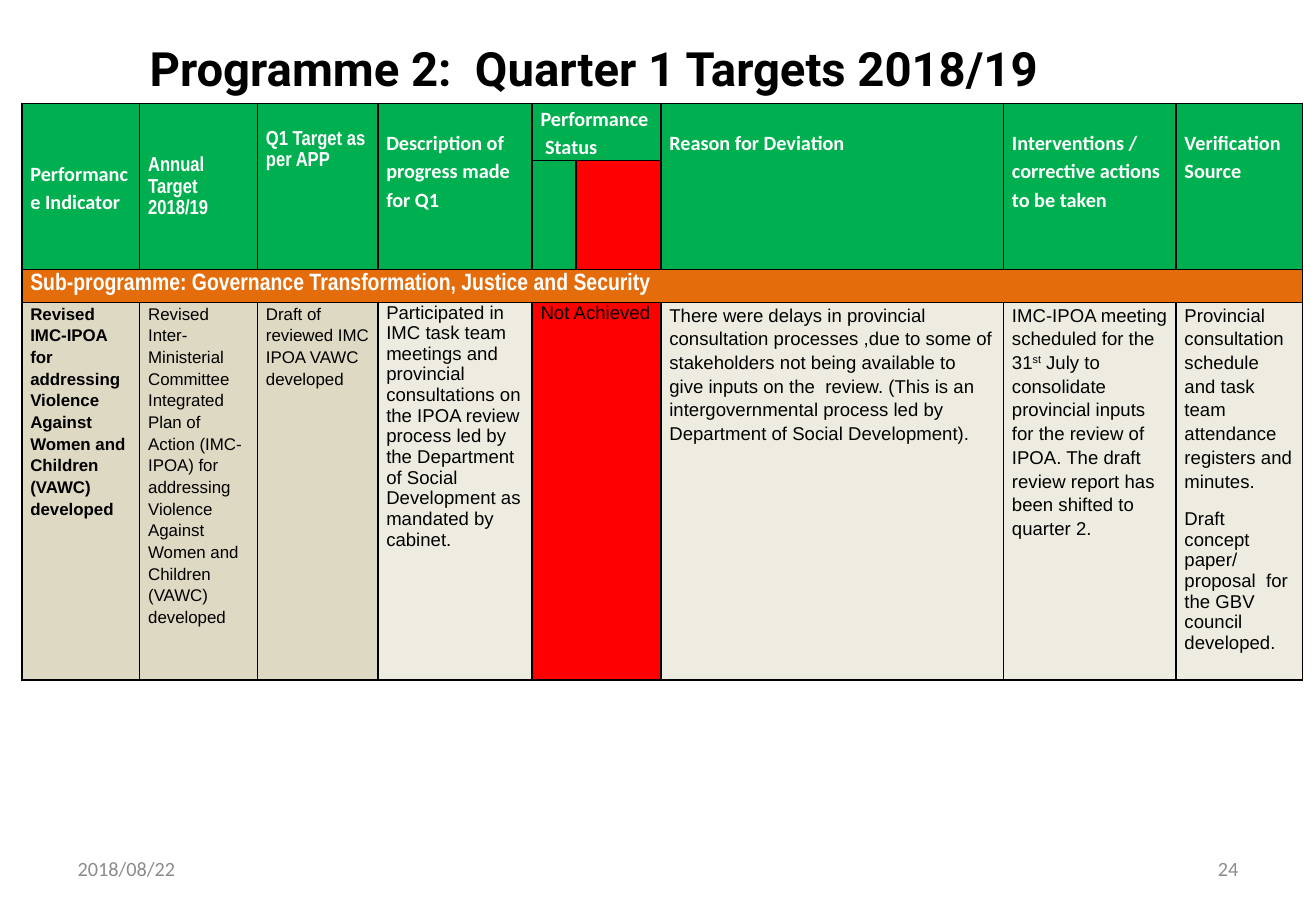
"""Build the Programme 2 quarterly targets slide."""
import pptx
import pptx.util
import pptx.dml.color
import pptx.enum.text
from lxml import etree

Inches, Pt = pptx.util.Inches, pptx.util.Pt
RGB = pptx.dml.color.RGBColor.from_string
ALIGN, ANCHOR = pptx.enum.text.PP_ALIGN, pptx.enum.text.MSO_ANCHOR

THEME = {
    "green": "00B050", "red": "FF0000", "orange": "E46C0A", "tan": "DDD9C3",
    "cream": "EEECE1", "border": "000000",
    "title": {"name": "Roboto", "size": Pt(28), "bold": True, "color": "000000"},
    "footer": {"name": "Calibri", "size": Pt(12), "bold": False, "color": "8C8C8C"},
    "head": {"name": "Calibri", "size": Pt(12), "bold": True, "color": "FFFFFF"},
    "narrow": {"name": "Arial Narrow", "size": Pt(12), "bold": True, "color": "FFFFFF"},
    "band": {"name": "Arial Narrow", "size": Pt(14), "bold": True, "color": "FFFFFF"},
    "key": {"name": "Arial", "size": Pt(10), "bold": True, "color": "000000"},
    "target": {"name": "Arial", "size": Pt(10), "bold": False, "color": "000000"},
    "body": {"name": "Arial", "size": Pt(11), "bold": False, "color": "000000"},
}


def add_text(p, text, style):
    """Add one formatted run to a paragraph."""
    r = p.add_run()
    r.text = text
    for key, value in THEME[style].items():
        if key == "color":
            r.font.color.rgb = RGB(value)
        else:
            setattr(r.font, key, value)
    return r


def set_cell(cell, fill, anchor=ANCHOR.TOP, top=0):
    """Give a cell its fill, margins and black borders."""
    cell.fill.solid()
    cell.fill.fore_color.rgb = RGB(THEME[fill])
    layout = {"margin_left": Inches(0.07), "margin_right": Inches(0.07),
              "margin_top": Inches(top), "margin_bottom": 0, "vertical_anchor": anchor}
    for key, value in layout.items():
        setattr(cell, key, value)
    tcPr = cell._tc.get_or_add_tcPr()
    ns = "{http://schemas.openxmlformats.org/drawingml/2006/main}"
    for i, side in enumerate(("lnL", "lnR", "lnT", "lnB")):
        ln = etree.Element(ns + side, w=str(Pt(1)))
        solid = etree.SubElement(ln, ns + "solidFill")
        etree.SubElement(solid, ns + "srgbClr", val=THEME["border"])
        tcPr.insert(i, ln)


prs = pptx.Presentation()
prs.slide_width, prs.slide_height = Inches(10.83), Inches(7.5)
s = prs.slides.add_slide(prs.slide_layouts[6])

labels = [
    ("Programme 2:  Quarter 1 Targets 2018/19", "title", ALIGN.CENTER, (0.15, 0.17, 9.47, 0.78)),
    ("2018/08/22", "footer", ALIGN.LEFT, (0.54, 6.95, 2.53, 0.4)),
    ("24", "footer", ALIGN.RIGHT, (7.76, 6.95, 2.53, 0.4)),
]
for text, style, align, box in labels:
    tf = s.shapes.add_textbox(*map(Inches, box)).text_frame
    tf.word_wrap = True
    tf.vertical_anchor = ANCHOR.MIDDLE
    tf.paragraphs[0].alignment = align
    add_text(tf.paragraphs[0], text, style)

widths = [0.97, 0.97, 0.99, 1.27, 0.36, 0.7, 2.82, 1.42, 1.04]
heights = [0.47, 0.9, 0.21, 2.89]
table = s.shapes.add_table(len(heights), len(widths), Inches(0.18), Inches(0.85),
                           Inches(sum(widths)), Inches(sum(heights))).table
table.first_row = table.horz_banding = False
for column, width in zip(table.columns, widths):
    column.width = Inches(width)
for row, height in zip(table.rows, heights):
    row.height = Inches(height)

headers = [
    (0, "Performance Indicator", "head", ANCHOR.MIDDLE, 0),
    (1, "Annual Target 2018/19", "narrow", ANCHOR.MIDDLE, 0),
    (2, "Q1 Target as per APP", "narrow", ANCHOR.TOP, 0.2),
    (3, "Description of progress made   for Q1", "head", ANCHOR.TOP, 0.2),
    (4, "Performance  Status", "head", ANCHOR.TOP, 0),
    (6, "Reason for Deviation", "head", ANCHOR.TOP, 0.2),
    (7, "Interventions / corrective actions  to be taken", "head", ANCHOR.TOP, 0.2),
    (8, "Verification Source", "head", ANCHOR.TOP, 0.2),
]
for r in range(2):
    for c in range(len(widths)):
        set_cell(table.cell(r, c), "red" if (r, c) == (1, 5) else "green")
for c, text, style, anchor, top in headers:
    cell = table.cell(0, c)
    cell.merge(table.cell(0, 5) if c == 4 else table.cell(1, c))
    cell.vertical_anchor, cell.margin_top = anchor, Inches(top)
    p = cell.text_frame.paragraphs[0]
    p.line_spacing = 1.15
    add_text(p, text, style)

for c in range(len(widths)):
    set_cell(table.cell(2, c), "orange")
band = table.cell(2, 0)
band.merge(table.cell(2, 8))
band.text_frame.paragraphs[0].line_spacing = 1.15
add_text(band.text_frame.paragraphs[0],
         "Sub-programme: Governance Transformation, Justice and Security", "band")

details = [
    (0, "tan", "key", [(1.15, ["Revised IMC-IPOA for addressing Violence Against Women and "
                               "Children (VAWC) developed"])]),
    (1, "tan", "target", [(1.15, ["Revised Inter-Ministerial Committee Integrated Plan of Action "
                                  "(IMC-IPOA) for addressing Violence Against Women and Children "
                                  "(VAWC) developed"])]),
    (2, "tan", "target", [(1.15, ["Draft of reviewed IMC IPOA VAWC developed"])]),
    (3, "cream", "body", [(1, ["Participated in IMC task team meetings and provincial "
                               "consultations on the IPOA review process led by the Department "
                               "of Social Development as mandated by cabinet."])]),
    (4, "red", "body", [(1, ["Not Achieved"])]),
    (5, "red", "body", []),
    (6, "cream", "body", [(1.15, ["There were delays in provincial consultation processes ,due to "
                                  "some of stakeholders not being available to give inputs on the  "
                                  "review. (This is an intergovernmental process led by Department "
                                  "of Social Development)."])]),
    (7, "cream", "body", [(1.15, ["IMC-IPOA meeting scheduled for the 31", "st",
                                  " July to consolidate provincial inputs for the review of IPOA. "
                                  "The draft  review report has been shifted to quarter 2."])]),
    (8, "cream", "body", [(1.15, ["Provincial consultation schedule and task team attendance "
                                  "registers and minutes."]),
                          (1, ["Draft  concept paper/ proposal  for the GBV council developed."])]),
]
for c, fill, style, paragraphs in details:
    cell = table.cell(3, c)
    set_cell(cell, fill)
    for i, (spacing, runs) in enumerate(paragraphs):
        p = cell.text_frame.add_paragraph() if i else cell.text_frame.paragraphs[0]
        p.line_spacing = spacing
        p.space_after = Pt(10 if i < len(paragraphs) - 1 else 0)
        for text in runs:
            run = add_text(p, text, style)
            if text == "st":
                run.font._element.set("baseline", "30000")
table.cell(3, 4).merge(table.cell(3, 5))

prs.save("out.pptx")
